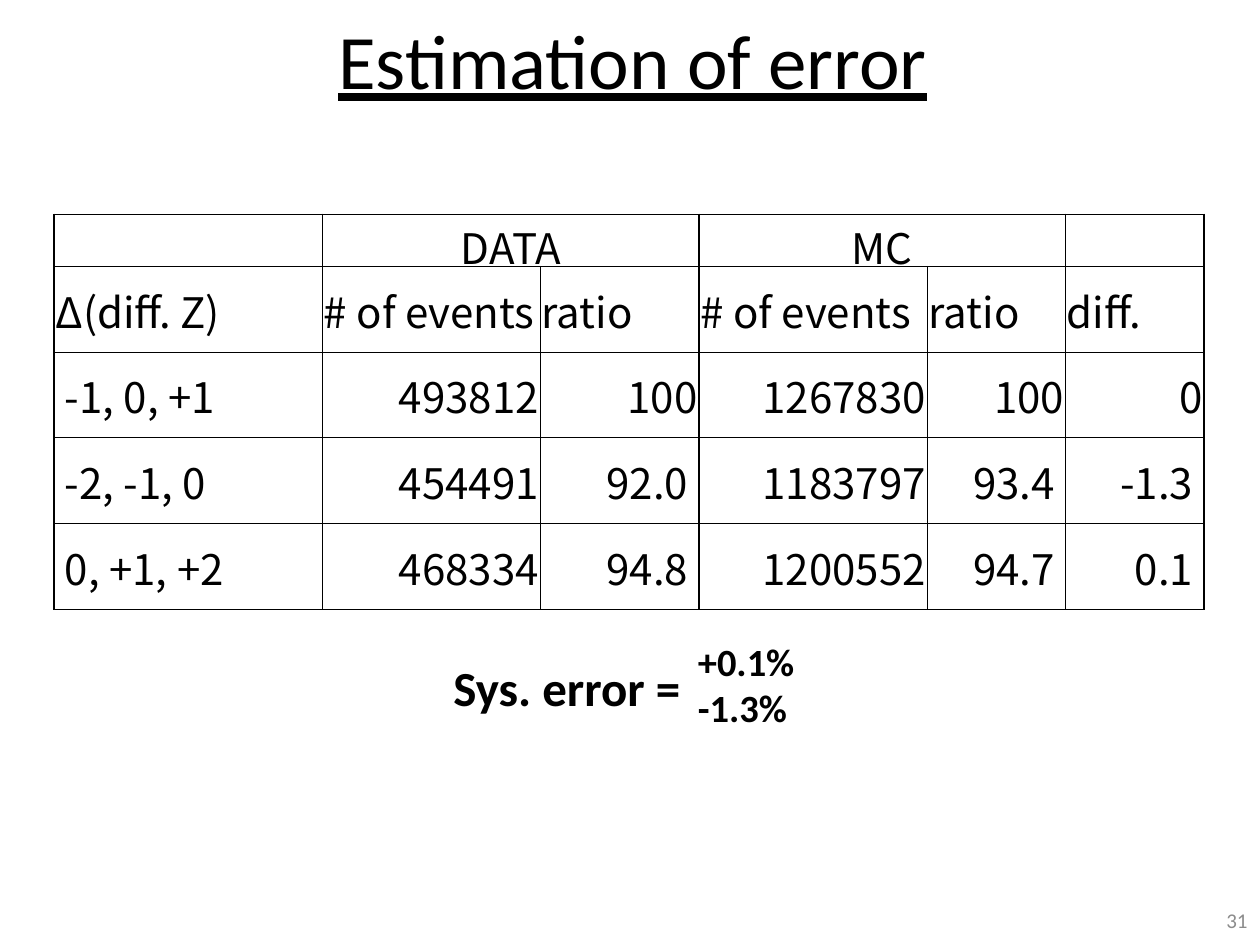
from lxml import etree
from pptx import Presentation
from pptx import util as u
from pptx.dml.color import RGBColor
from pptx.enum import text
from pptx.oxml import ns

BLACK = RGBColor(0x00, 0x00, 0x00)
GREY = RGBColor(0x8C, 0x8C, 0x8C)
BODY_FONT = "Calibri"
TABLE_FONT = "Noto Sans CJK JP"
LEFT, CENTER, RIGHT = text.PP_ALIGN.LEFT, text.PP_ALIGN.CENTER, text.PP_ALIGN.RIGHT
TOP, MIDDLE = text.MSO_ANCHOR.TOP, text.MSO_ANCHOR.MIDDLE

COLUMN_WIDTHS = [5.41, 4.39, 3.2, 4.6, 2.79, 2.79]
ROW_HEIGHTS = [0.97] + [1.73] * 4
HEAVY_COLUMN_EDGES = {0, 1, 3, 5, 6}
HEAVY_ROW_EDGES = {0, 5}
ROWS = [
    ["", "DATA", "", "MC", "", ""],
    ["Δ(diff. Z)", "# of events", "ratio", "# of events", "ratio", "diff."],
    [" -1, 0, +1", "493812", "100", "1267830", "100", "0"],
    [" -2, -1, 0", "454491", "92.0 ", "1183797", "93.4 ", "-1.3 "],
    [" 0, +1, +2", "468334", "94.8 ", "1200552", "94.7 ", "0.1 "],
]


def add_run(paragraph, words, size, font_name=BODY_FONT, color=BLACK, bold=False, underline=False):
    """Append one formatted run to a paragraph."""
    run = paragraph.add_run()
    run.text = words
    font = run.font
    font.name, font.size, font.bold, font.underline = font_name, u.Pt(size), bold, underline
    font.color.rgb = color


def add_text(shapes, box, lines, size, align=LEFT, anchor=TOP, **style):
    """Add a text box with its lines separated by line breaks."""
    shape = shapes.add_textbox(*(u.Cm(length) for length in box))
    frame = shape.text_frame
    frame.word_wrap = True
    frame.vertical_anchor = anchor
    paragraph = frame.paragraphs[0]
    paragraph.alignment = align
    for index, line in enumerate(lines):
        if index:
            paragraph.add_line_break()
        add_run(paragraph, line, size, **style)


def set_borders(cell, row, column):
    """Draw heavy lines around column groups and the table, thin ones elsewhere."""
    end = column + (cell.span_width if cell.is_merge_origin else 1)
    heavy = {
        "L": column in HEAVY_COLUMN_EDGES,
        "R": end in HEAVY_COLUMN_EDGES,
        "T": row in HEAVY_ROW_EDGES,
        "B": row + 1 in HEAVY_ROW_EDGES,
    }
    properties = cell._tc.get_or_add_tcPr()
    for side, is_heavy in heavy.items():
        width = u.Pt(1 if is_heavy else 0.5)
        line = etree.SubElement(properties, ns.qn(f"a:ln{side}"), w=str(int(width)))
        fill = etree.SubElement(line, ns.qn("a:solidFill"))
        etree.SubElement(fill, ns.qn("a:srgbClr"), val=str(BLACK))


def fill_cell(cell, words, align):
    """Write one table entry with tight margins."""
    cell.margin_left = cell.margin_right = cell.margin_top = u.Cm(0.03)
    cell.margin_bottom = 0
    cell.vertical_anchor = MIDDLE
    paragraph = cell.text_frame.paragraphs[0]
    paragraph.alignment = align
    add_run(paragraph, words, 24, TABLE_FONT)


def add_event_table(slide, left, top):
    """Build the comparison of data and simulation events."""
    frame = slide.shapes.add_table(
        len(ROWS), len(COLUMN_WIDTHS), u.Cm(left), u.Cm(top),
        u.Cm(sum(COLUMN_WIDTHS)), u.Cm(sum(ROW_HEIGHTS)))
    table = frame.table
    table.first_row = table.horz_banding = False
    for column, width in zip(table.columns, COLUMN_WIDTHS):
        column.width = u.Cm(width)
    for row, height in zip(table.rows, ROW_HEIGHTS):
        row.height = u.Cm(height)
    for start in (1, 3):
        table.cell(0, start).merge(table.cell(0, start + 1))
    for row, entries in enumerate(ROWS):
        for column, words in enumerate(entries):
            cell = table.cell(row, column)
            set_borders(cell, row, column)
            cell.fill.background()
            if words:
                align = CENTER if row == 0 else RIGHT if row > 1 and column else LEFT
                fill_cell(cell, words, align)


def add_error_result(slide, left, top):
    """Group the systematic error label with its two limits."""
    group = slide.shapes.add_group_shape()
    add_text(group.shapes, (left + 4.93, top, 4.22, 2.13), ["+0.1%", "-1.3%"], 22, bold=True)
    add_text(group.shapes, (left, top + 0.4, 6.15, 1.45), ["Sys. error ="], 28, bold=True)


def main():
    """Build and save the slide."""
    presentation = Presentation()
    presentation.slide_width, presentation.slide_height = u.Cm(25.4), u.Cm(19.05)
    slide = presentation.slides.add_slide(presentation.slide_layouts[6])
    add_text(slide.shapes, (-0.23, 0, 25.98, 2.36), ["Estimation of error"], 44,
             CENTER, MIDDLE, underline=True)
    add_text(slide.shapes, (23.22, 18.03, 2.18, 1.02), ["31"], 12, RIGHT, MIDDLE, color=GREY)
    add_error_result(slide, 8.89, 12.73)
    add_event_table(slide, 1.09, 4.32)
    presentation.save("out.pptx")


if __name__ == "__main__":
    main()
